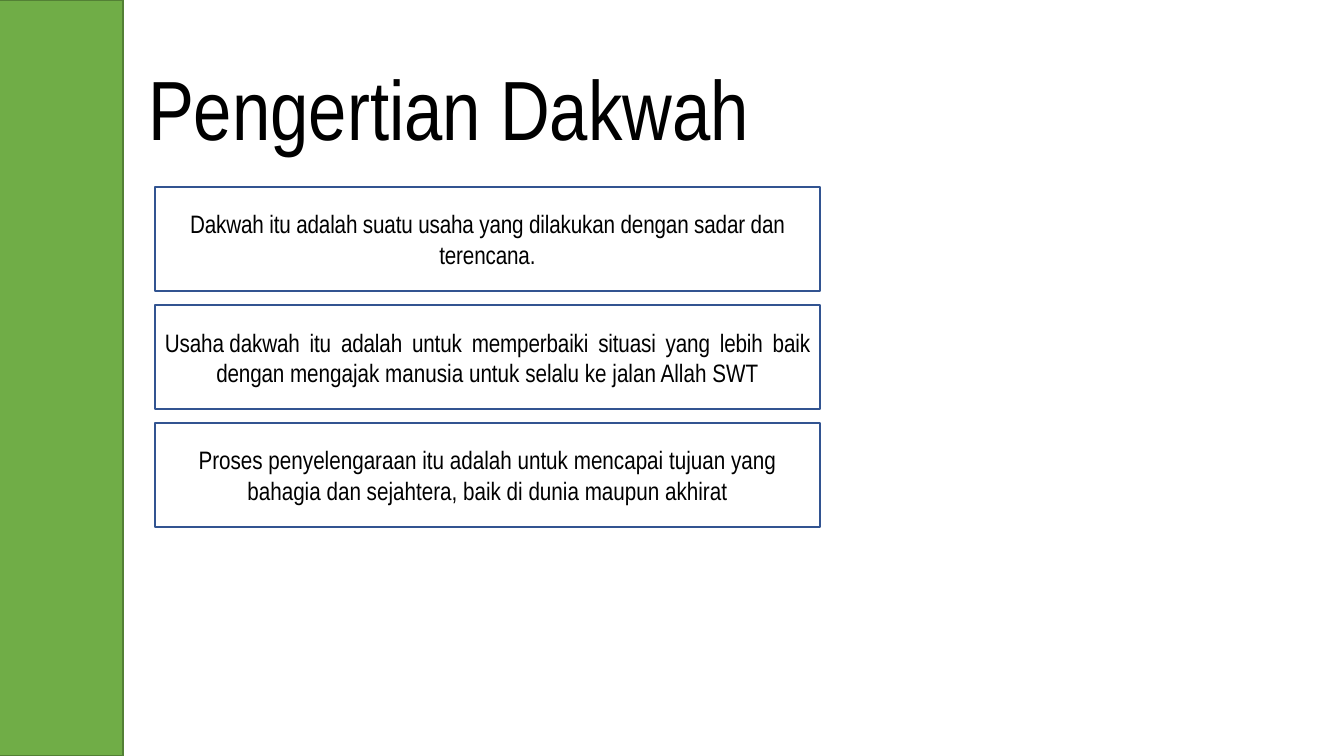
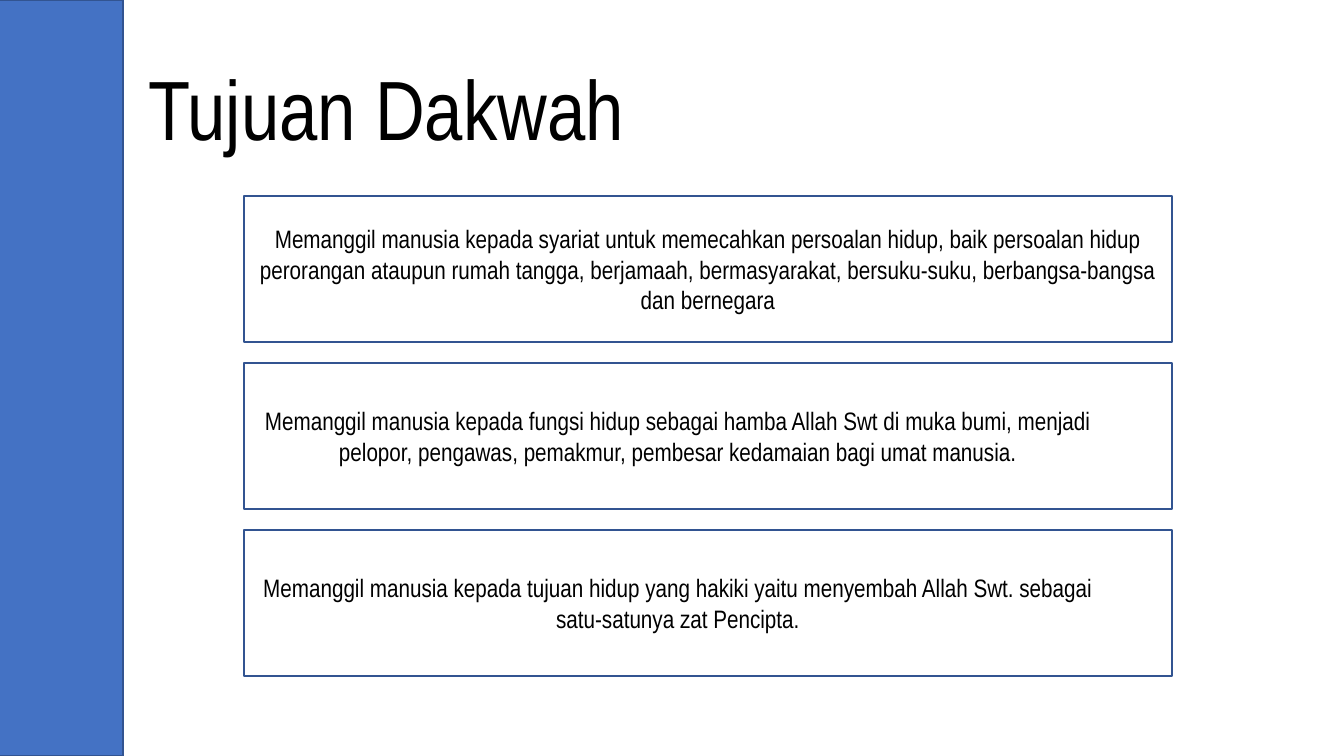
from pptx import Presentation
from pptx.dml.color import RGBColor
from pptx.enum.shapes import MSO_SHAPE
from pptx.enum.text import MSO_ANCHOR, MSO_AUTO_SIZE, PP_ALIGN
from pptx.util import Emu, Pt

RECT = MSO_SHAPE.RECTANGLE
MIDDLE = MSO_ANCHOR.MIDDLE
FIXED = MSO_AUTO_SIZE.NONE
LEFT = PP_ALIGN.LEFT
CENTER = PP_ALIGN.CENTER
SCALE = 914400 / 100.8
WIDE, HIGH = 1344, 756
INSET = 10
TIGHT, LOOSE = -10, 290
NAVY = "325491"
FRAME = {"word_wrap": True, "auto_size": FIXED, "vertical_anchor": MIDDLE}
TITLE = {"name": "Arial Narrow", "size": Pt(60)}
BODY = {"name": "Arial Narrow", "size": Pt(18)}


def px(num):
    return Emu(round(num * SCALE))


def color(code):
    return RGBColor.from_string(code)


stretch = [("Usaha dakwah", TIGHT)]
for word in "itu adalah untuk memperbaiki situasi yang lebih baik".split():
    stretch += [(" ", LOOSE), (word, TIGHT)]

PAGES = [
    {
        "title": "Pengertian Dakwah",
        "fill": "70AD47",
        "line": "538035",
        "grid": (155, 187, 665, 104, 118),
        "boxes": [
            ([("Dakwah itu adalah suatu usaha yang dilakukan dengan sadar dan terencana.", TIGHT)], INSET),
            (stretch + [(" dengan ", TIGHT), ("mengajak manusia untuk selalu ke jalan Allah SWT", 0)], INSET),
            ([("Proses penyelengaraan itu adalah untuk mencapai tujuan yang bahagia dan "
               "sejahtera, baik di dunia maupun akhirat", 0)], INSET),
        ],
    },
    {
        "title": "Tujuan Dakwah",
        "fill": "4472C4",
        "line": NAVY,
        "grid": (244, 196, 928, 146, 167),
        "boxes": [
            ([("Memanggil manusia kepada syariat untuk memecahkan persoalan hidup, baik "
               "persoalan hidup perorangan ataupun rumah tangga, berjamaah, bermasyarakat, "
               "bersuku-suku, berbangsa-bangsa dan bernegara", 0)], INSET),
            ([("Memanggil manusia kepada fungsi hidup sebagai hamba Allah Swt di muka bumi, "
               "menjadi pelopor, pengawas, pemakmur, pembesar kedamaian bagi umat manusia.", 0)], 70),
            ([("Memanggil manusia kepada tujuan hidup yang hakiki yaitu menyembah Allah Swt. "
               "sebagai satu-satunya zat Pencipta.", 0)], 70),
        ],
    },
]

deck = Presentation()
deck.slide_width, deck.slide_height = px(WIDE), px(HIGH)

for page in PAGES:
    slide = deck.slides.add_slide(deck.slide_layouts[5])
    band = slide.shapes.add_shape(RECT, px(-7), px(0), px(130), px(HIGH))
    band.shadow.inherit = False
    band.fill.solid()
    band.fill.fore_color.rgb = color(page["fill"])
    band.line.color.rgb = color(page["line"])
    band.line.width = Pt(1)

    title = slide.shapes.title
    place = {"left": px(138), "top": px(40), "width": px(1114), "height": px(146)}
    for key, val in place.items():
        setattr(title, key, val)
    for key, val in FRAME.items():
        setattr(title.text_frame, key, val)
    title.text_frame.text = page["title"]
    para = title.text_frame.paragraphs[0]
    para.alignment = LEFT
    para.line_spacing = 0.9
    font = para.runs[0].font
    for key, val in TITLE.items():
        setattr(font, key, val)
    font.color.rgb = color("000000")

    left, top, width, height, step = page["grid"]
    for row, (parts, inset) in enumerate(page["boxes"]):
        box = slide.shapes.add_shape(RECT, px(left), px(top + row * step), px(width), px(height))
        box.shadow.inherit = False
        box.fill.background()
        box.line.color.rgb = color(NAVY)
        box.line.width = Pt(1)
        frame = box.text_frame
        for key, val in FRAME.items():
            setattr(frame, key, val)
        frame.margin_right = px(inset)
        para = frame.paragraphs[0]
        para.alignment = CENTER
        for text, gap in parts:
            run = para.add_run()
            run.text = text
            for key, val in BODY.items():
                setattr(run.font, key, val)
            run.font.color.rgb = color("000000")
            run._r.get_or_add_rPr().set("spc", str(gap))

deck.save("out.pptx")
